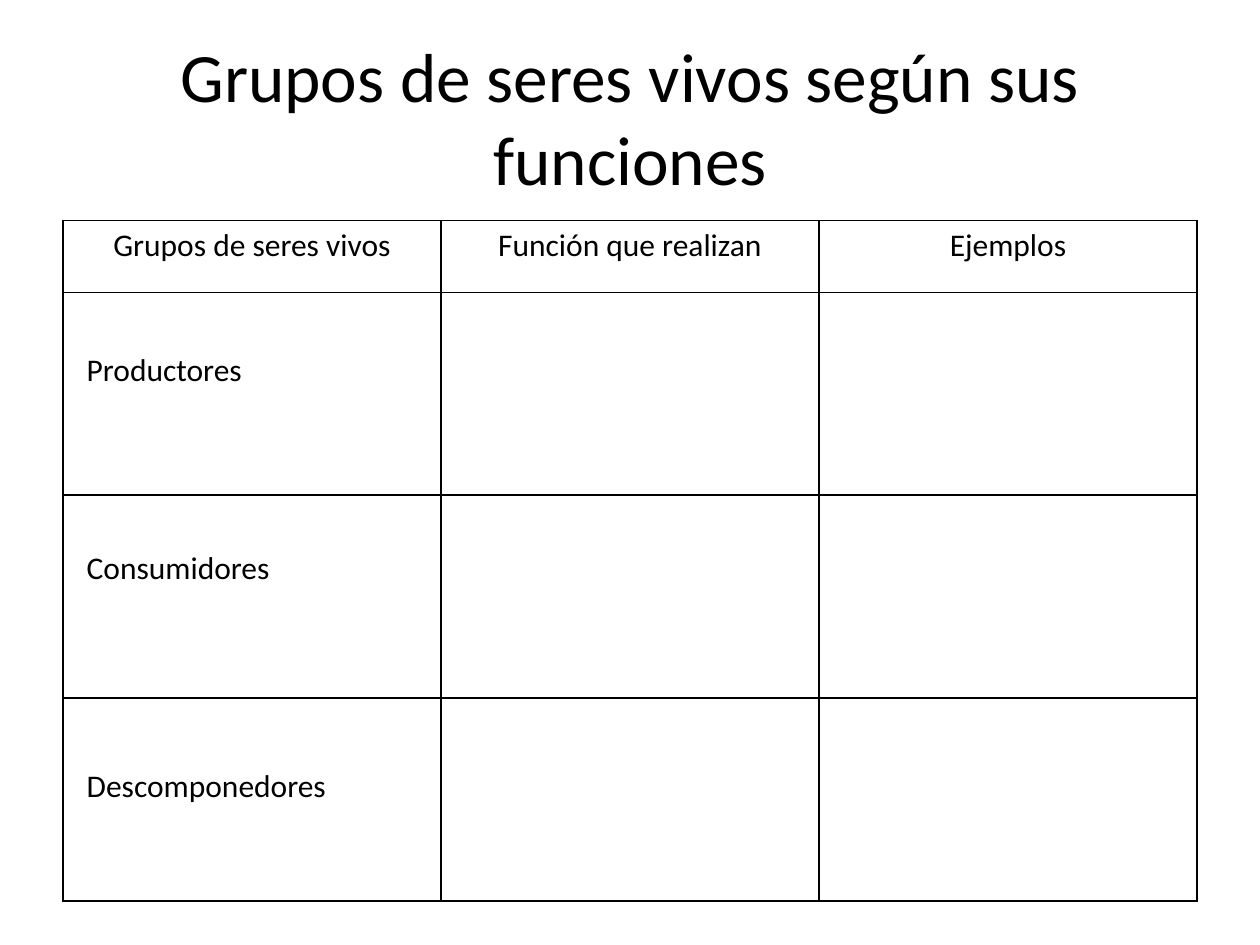
from lxml import etree
from pptx import Presentation
from pptx import util as u
from pptx.dml import color
from pptx.enum import text
from pptx.oxml import ns

COLORS = {"background": "FFFFFF", "ink": "000000"}
FONT = "Calibri"
HEADERS = ["Grupos de seres vivos", "Función que realizan", "Ejemplos"]
GROUPS = [("Productores", 2.73), ("Consumidores", 4.3), ("Descomponedores", 6.03)]
HEADER_HEIGHT, ROW_HEIGHT = 0.57, 1.61


def write(frame, content, size, alignment):
    """Fill a text frame with one formatted paragraph."""
    frame.text = content
    paragraph = frame.paragraphs[0]
    paragraph.alignment = alignment
    for run in paragraph.runs:
        run.font.name = FONT
        run.font.size = u.Pt(size)
        run.font.color.rgb = color.RGBColor.from_string(COLORS["ink"])


def border_cell(cell):
    """Draw a thin line on all four sides of a cell and leave it unfilled."""
    cell.fill.background()
    properties = cell._tc.get_or_add_tcPr()
    for index, side in enumerate(("lnL", "lnR", "lnT", "lnB")):
        line = etree.Element(ns.qn(f"a:{side}"), w=str(u.Pt(1)))
        fill = etree.SubElement(line, ns.qn("a:solidFill"))
        etree.SubElement(fill, ns.qn("a:srgbClr"), val=COLORS["ink"])
        properties.insert(index, line)


def add_title(slide, left, top, width, height):
    """Place the slide title in its placeholder."""
    title = slide.shapes.title
    title.left, title.top = u.Inches(left), u.Inches(top)
    title.width, title.height = u.Inches(width), u.Inches(height)
    frame = title.text_frame
    write(frame, "Grupos de seres vivos según sus funciones", 39.6, text.PP_ALIGN.CENTER)
    frame.word_wrap = True
    frame.auto_size = text.MSO_AUTO_SIZE.NONE
    frame.vertical_anchor = text.MSO_ANCHOR.MIDDLE


def add_groups_table(slide, left, top, width):
    """Place the table of groups with its header row and empty answer cells."""
    height = HEADER_HEIGHT + ROW_HEIGHT * len(GROUPS)
    table = slide.shapes.add_table(
        len(GROUPS) + 1, len(HEADERS),
        u.Inches(left), u.Inches(top), u.Inches(width), u.Inches(height),
    ).table
    table.first_row = table.horz_banding = False
    for column in table.columns:
        column.width = u.Inches(width / len(HEADERS))
    for index, row in enumerate(table.rows):
        row.height = u.Inches(ROW_HEIGHT if index else HEADER_HEIGHT)
    for cell in table.iter_cells():
        border_cell(cell)
    for column, header in enumerate(HEADERS):
        write(table.cell(0, column).text_frame, header, 18, text.PP_ALIGN.CENTER)


def add_group_labels(slide, left, width, height):
    """Place the name of each group over the first column."""
    for name, top in GROUPS:
        label = slide.shapes.add_textbox(
            u.Inches(left), u.Inches(top), u.Inches(width), u.Inches(height)
        )
        label.text_frame.word_wrap = True
        label.text_frame.auto_size = text.MSO_AUTO_SIZE.SHAPE_TO_FIT_TEXT
        write(label.text_frame, name, 18, text.PP_ALIGN.LEFT)


def main():
    """Build the slide and save it."""
    presentation = Presentation()
    presentation.slide_width, presentation.slide_height = u.Inches(10), u.Inches(7.5)
    slide = presentation.slides.add_slide(presentation.slide_layouts[5])
    background = slide.background.fill
    background.solid()
    background.fore_color.rgb = color.RGBColor.from_string(COLORS["background"])
    add_title(slide, 0.5, 0.3, 9, 1.25)
    add_groups_table(slide, 0.5, 1.75, 9)
    add_group_labels(slide, 0.59, 2.6, 0.4)
    presentation.save("out.pptx")


if __name__ == "__main__":
    main()
